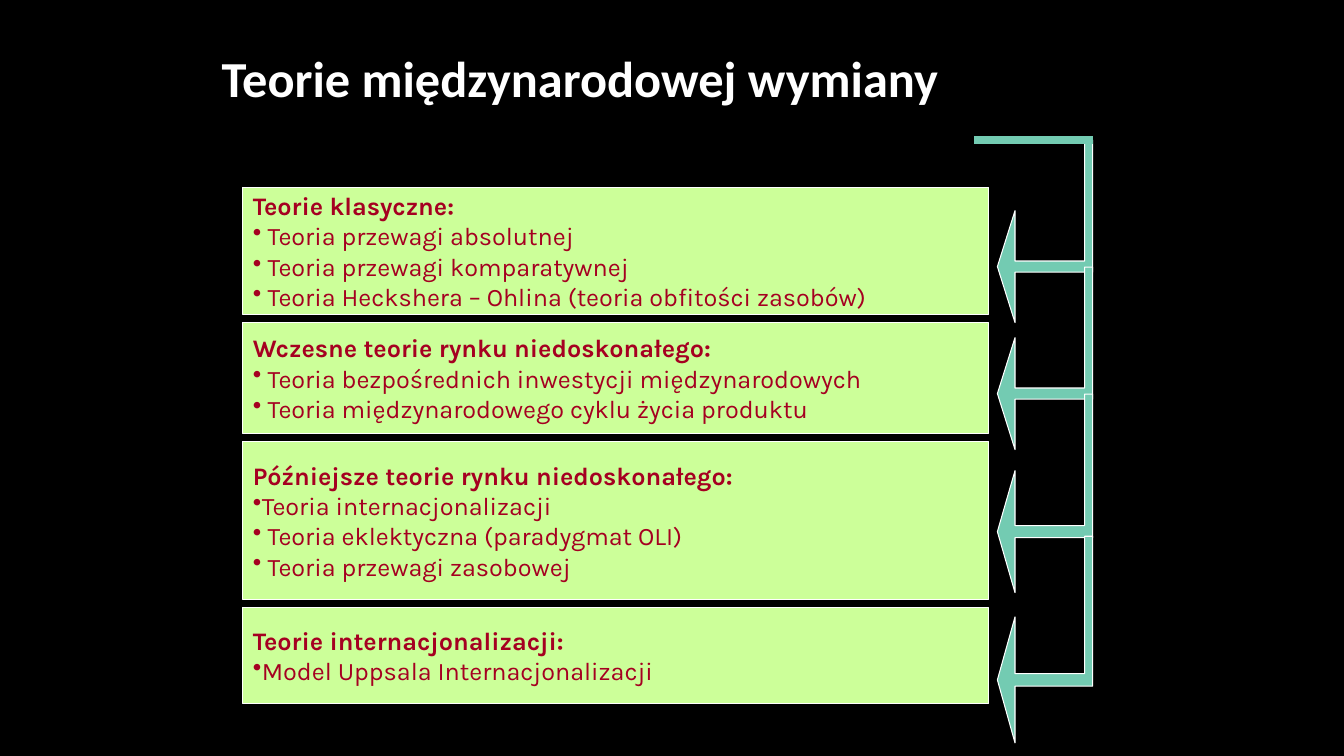
from dataclasses import dataclass

from lxml.etree import SubElement
from pptx import Presentation
from pptx.dml.color import RGBColor
from pptx.enum.shapes import MSO_CONNECTOR, MSO_SHAPE
from pptx.enum.text import MSO_ANCHOR, PP_ALIGN
from pptx.oxml.ns import qn
from pptx.slide import Slide
from pptx.util import Emu, Inches, Pt


@dataclass(frozen=True)
class Theme:
    back: RGBColor = RGBColor(0x00, 0x00, 0x00)
    white: RGBColor = RGBColor(0xFF, 0xFF, 0xFF)
    panel: RGBColor = RGBColor(0xCC, 0xFF, 0x99)
    text: RGBColor = RGBColor(0xA5, 0x00, 0x21)
    arrow: RGBColor = RGBColor(0x73, 0xCB, 0xB2)
    head_font: str = "Calibri"
    body_font: str = "Karla"
    head_size: Pt = Pt(36)
    body_size: Pt = Pt(18)
    edge: Pt = Pt(0.75)
    bar: Pt = Pt(6)


@dataclass(frozen=True)
class Panel:
    rows: float
    head: str
    items: tuple[str, ...]


@dataclass(frozen=True)
class Arrow:
    start: float
    mid: float
    half: float


THEME = Theme()
WIDTH, HEIGHT = Inches(13.33), Inches(7.5)
COLS, ROWS = 160, 90

# Panels, stacked from the top row with an equal gap
LEFT, TOP, SPAN, GAP = 28.92, 22.32, 88.8, 0.96
PANELS = (
    Panel(15.12, "Teorie klasyczne:", (
        " Teoria przewagi absolutnej",
        " Teoria przewagi komparatywnej",
        " Teoria Heckshera – Ohlina (teoria obfitości zasobów)")),
    Panel(13.2, "Wczesne teorie rynku niedoskonałego:", (
        " Teoria bezpośrednich inwestycji międzynarodowych",
        " Teoria międzynarodowego cyklu życia produktu")),
    Panel(18.84, "Późniejsze teorie rynku niedoskonałego:", (
        "Teoria internacjonalizacji",
        " Teoria eklektyczna (paradygmat OLI)",
        " Teoria przewagi zasobowej")),
    Panel(11.4, "Teorie internacjonalizacji:", (
        "Model Uppsala Internacjonalizacji",)),
)

# Arrow columns: tip, neck, inner and outer edge of the stem
TIP, NECK, INNER, OUTER = 118.74, 120.84, 129.12, 130.08
ARROWS = (
    Arrow(16.68, 31.74, 6.66),
    Arrow(31.8, 46.86, 6.66),
    Arrow(46.92, 63.3, 7.26),
    Arrow(63.84, 80.94, 7.5),
)


def col(n: float) -> Emu:
    return Emu(round(WIDTH * n / COLS))


def row(n: float) -> Emu:
    return Emu(round(HEIGHT * n / ROWS))


def paint(shape, fill: RGBColor) -> None:
    shape.shadow.inherit = False
    shape.fill.solid()
    shape.fill.fore_color.rgb = fill
    shape.line.color.rgb = THEME.white
    shape.line.width = THEME.edge


def write(para, text: str, font: str, size: Pt, color: RGBColor,
          bold: bool) -> None:
    para.text = text
    para.alignment = PP_ALIGN.LEFT
    para.font.name = font
    para.font.size = size
    para.font.color.rgb = color
    para.font.bold = bold


def add_title(slide: Slide, text: str) -> None:
    box = slide.shapes.add_textbox(col(25.2), row(2.16), col(108), row(15))
    frame = box.text_frame
    frame.word_wrap = True
    frame.vertical_anchor = MSO_ANCHOR.MIDDLE
    para = frame.paragraphs[0]
    para.line_spacing = 0.9
    write(para, text, THEME.head_font, THEME.head_size, THEME.white, True)


def add_panel(slide: Slide, panel: Panel, top: float) -> None:
    box = slide.shapes.add_shape(MSO_SHAPE.RECTANGLE, col(LEFT), row(top),
                                 col(SPAN), row(panel.rows))
    paint(box, THEME.panel)
    frame = box.text_frame
    frame.word_wrap = True
    frame.vertical_anchor = MSO_ANCHOR.MIDDLE
    write(frame.paragraphs[0], panel.head, THEME.body_font,
          THEME.body_size, THEME.text, True)
    for item in panel.items:
        para = frame.add_paragraph()
        props = para._p.get_or_add_pPr()
        SubElement(props, qn("a:buChar")).set("char", "•")
        write(para, item, THEME.body_font, THEME.body_size, THEME.text, False)


def add_arrow(slide: Slide, arrow: Arrow) -> None:
    mid, half, shaft = arrow.mid, arrow.half, arrow.half / 10
    spots = (
        (TIP, mid), (NECK, mid - half), (NECK, mid - shaft),
        (INNER, mid - shaft), (INNER, arrow.start), (OUTER, arrow.start),
        (OUTER, mid + shaft), (NECK, mid + shaft), (NECK, mid + half),
    )
    first, *rest = [(col(x), row(y)) for x, y in spots]
    path = slide.shapes.build_freeform(*first)
    path.add_line_segments(rest, close=True)
    paint(path.convert_to_shape(), THEME.arrow)


def add_bar(slide: Slide) -> None:
    y = row(ARROWS[0].start)
    bar = slide.shapes.add_connector(MSO_CONNECTOR.STRAIGHT,
                                     col(OUTER), y, col(115.92), y)
    bar.line.color.rgb = THEME.arrow
    bar.line.width = THEME.bar
    SubElement(bar._element.spPr, qn("a:effectLst"))


def main() -> None:
    deck = Presentation()
    deck.slide_width, deck.slide_height = WIDTH, HEIGHT
    slide = deck.slides.add_slide(deck.slide_layouts[6])
    slide.background.fill.solid()
    slide.background.fill.fore_color.rgb = THEME.back

    add_title(slide, "Teorie międzynarodowej wymiany")
    top = TOP
    for panel in PANELS:
        add_panel(slide, panel, top)
        top += panel.rows + GAP
    for arrow in ARROWS:
        add_arrow(slide, arrow)
    add_bar(slide)
    deck.save("out.pptx")


if __name__ == "__main__":
    main()
